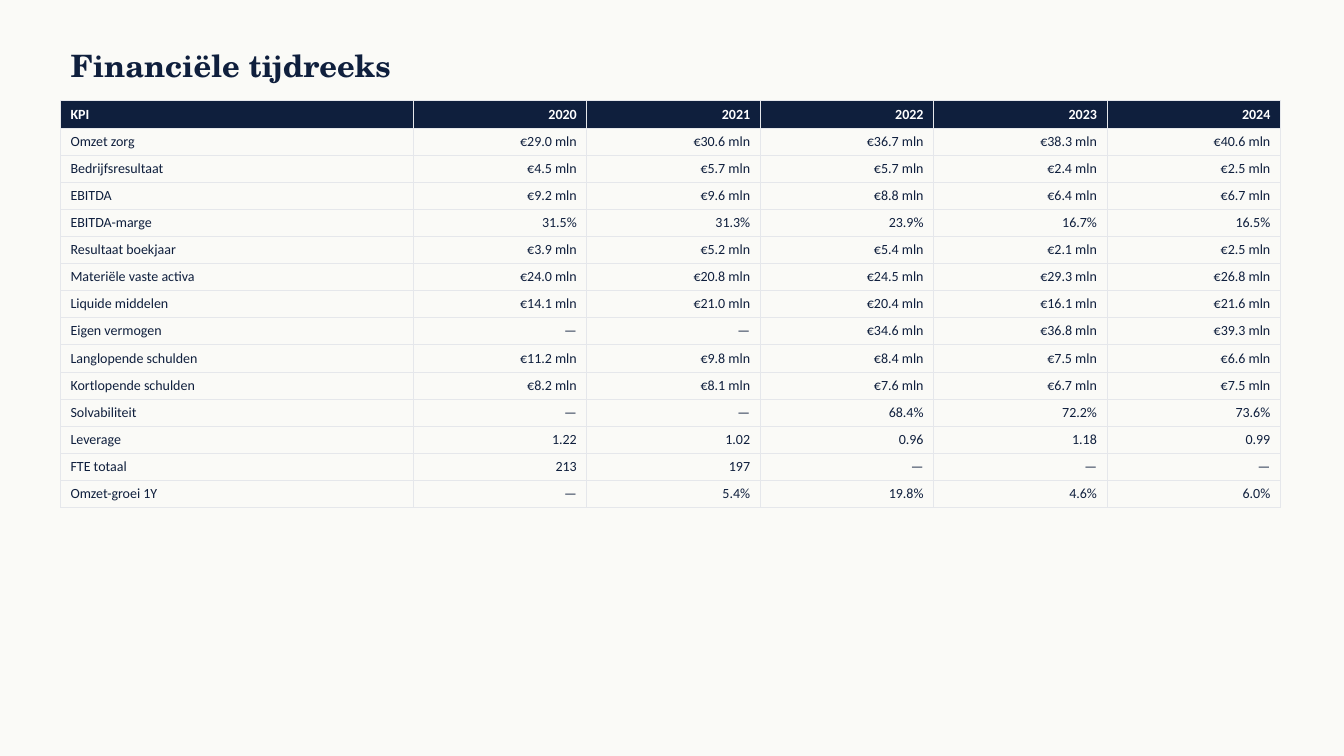
from lxml import etree
from pptx import Presentation
from pptx.dml.color import RGBColor
from pptx.enum.text import MSO_ANCHOR, MSO_AUTO_SIZE, PP_ALIGN
from pptx.oxml.ns import qn
from pptx.util import Inches, Pt

LEFT, RIGHT = PP_ALIGN.LEFT, PP_ALIGN.RIGHT
MIDDLE = MSO_ANCHOR.MIDDLE
NO_FIT = MSO_AUTO_SIZE.NONE

TITLE = "Financiële tijdreeks"
HEAD = ("KPI", "2020", "2021", "2022", "2023", "2024")
ROWS = [
    ("Omzet zorg", "€29.0 mln", "€30.6 mln", "€36.7 mln", "€38.3 mln", "€40.6 mln"),
    ("Bedrijfsresultaat", "€4.5 mln", "€5.7 mln", "€5.7 mln", "€2.4 mln", "€2.5 mln"),
    ("EBITDA", "€9.2 mln", "€9.6 mln", "€8.8 mln", "€6.4 mln", "€6.7 mln"),
    ("EBITDA-marge", "31.5%", "31.3%", "23.9%", "16.7%", "16.5%"),
    ("Resultaat boekjaar", "€3.9 mln", "€5.2 mln", "€5.4 mln", "€2.1 mln", "€2.5 mln"),
    ("Materiële vaste activa", "€24.0 mln", "€20.8 mln", "€24.5 mln", "€29.3 mln", "€26.8 mln"),
    ("Liquide middelen", "€14.1 mln", "€21.0 mln", "€20.4 mln", "€16.1 mln", "€21.6 mln"),
    ("Eigen vermogen", "—", "—", "€34.6 mln", "€36.8 mln", "€39.3 mln"),
    ("Langlopende schulden", "€11.2 mln", "€9.8 mln", "€8.4 mln", "€7.5 mln", "€6.6 mln"),
    ("Kortlopende schulden", "€8.2 mln", "€8.1 mln", "€7.6 mln", "€6.7 mln", "€7.5 mln"),
    ("Solvabiliteit", "—", "—", "68.4%", "72.2%", "73.6%"),
    ("Leverage", "1.22", "1.02", "0.96", "1.18", "0.99"),
    ("FTE totaal", "213", "197", "—", "—", "—"),
    ("Omzet-groei 1Y", "—", "5.4%", "19.8%", "4.6%", "6.0%"),
]
HEX = {"paper": "FAFAF7", "navy": "0F1F3D", "white": "FFFFFF", "rule": "E5E7EB"}
MARGIN, TOP, WIDTH = 0.6, 1, 12.1
LABEL, ROW = 3.5, 0.26


def color(name):
    return RGBColor.from_string(HEX[name])


def style(par, face, size, name, bold, align):
    par.alignment = align
    font = par.runs[0].font
    font.name, font.size, font.bold = face, Pt(size), bold
    font.color.rgb = color(name)


def border(cell):
    props = cell._tc.get_or_add_tcPr()
    for side in ("a:lnL", "a:lnR", "a:lnT", "a:lnB"):
        line = etree.SubElement(props, qn(side), w=str(Pt(0.5)))
        fill = etree.SubElement(line, qn("a:solidFill"))
        etree.SubElement(fill, qn("a:srgbClr"), val=HEX["rule"])


def add_title(slide):
    title = slide.shapes.title
    title.left, title.top = Inches(MARGIN), Inches(0.4)
    title.width, title.height = Inches(12), Inches(0.5)
    frame = title.text_frame
    frame.text = TITLE
    frame.auto_size = NO_FIT
    frame.vertical_anchor = MIDDLE
    style(frame.paragraphs[0], "TeX Gyre Schola", 22, "navy", True, LEFT)


def add_grid(slide):
    data = [HEAD] + ROWS
    table = slide.shapes.add_table(
        len(data), len(HEAD), Inches(MARGIN), Inches(TOP),
        Inches(WIDTH), Inches(ROW * len(data))).table
    table.first_row = table.horz_banding = False
    year = (WIDTH - LABEL) / (len(HEAD) - 1)
    for c, col in enumerate(table.columns):
        col.width = Inches(year if c else LABEL)
    for r, row in enumerate(data):
        for c, text in enumerate(row):
            cell = table.cell(r, c)
            cell.text = text
            border(cell)
            if r:
                cell.fill.background()
            else:
                cell.fill.solid()
                cell.fill.fore_color.rgb = color("navy")
            style(cell.text_frame.paragraphs[0], "Calibri", 10,
                  "navy" if r else "white", r == 0, RIGHT if c else LEFT)


def main():
    deck = Presentation()
    deck.slide_width, deck.slide_height = Inches(13.33), Inches(7.5)
    slide = deck.slides.add_slide(deck.slide_layouts[5])
    slide.background.fill.solid()
    slide.background.fill.fore_color.rgb = color("paper")
    add_title(slide)
    add_grid(slide)
    deck.save("out.pptx")


if __name__ == "__main__":
    main()
